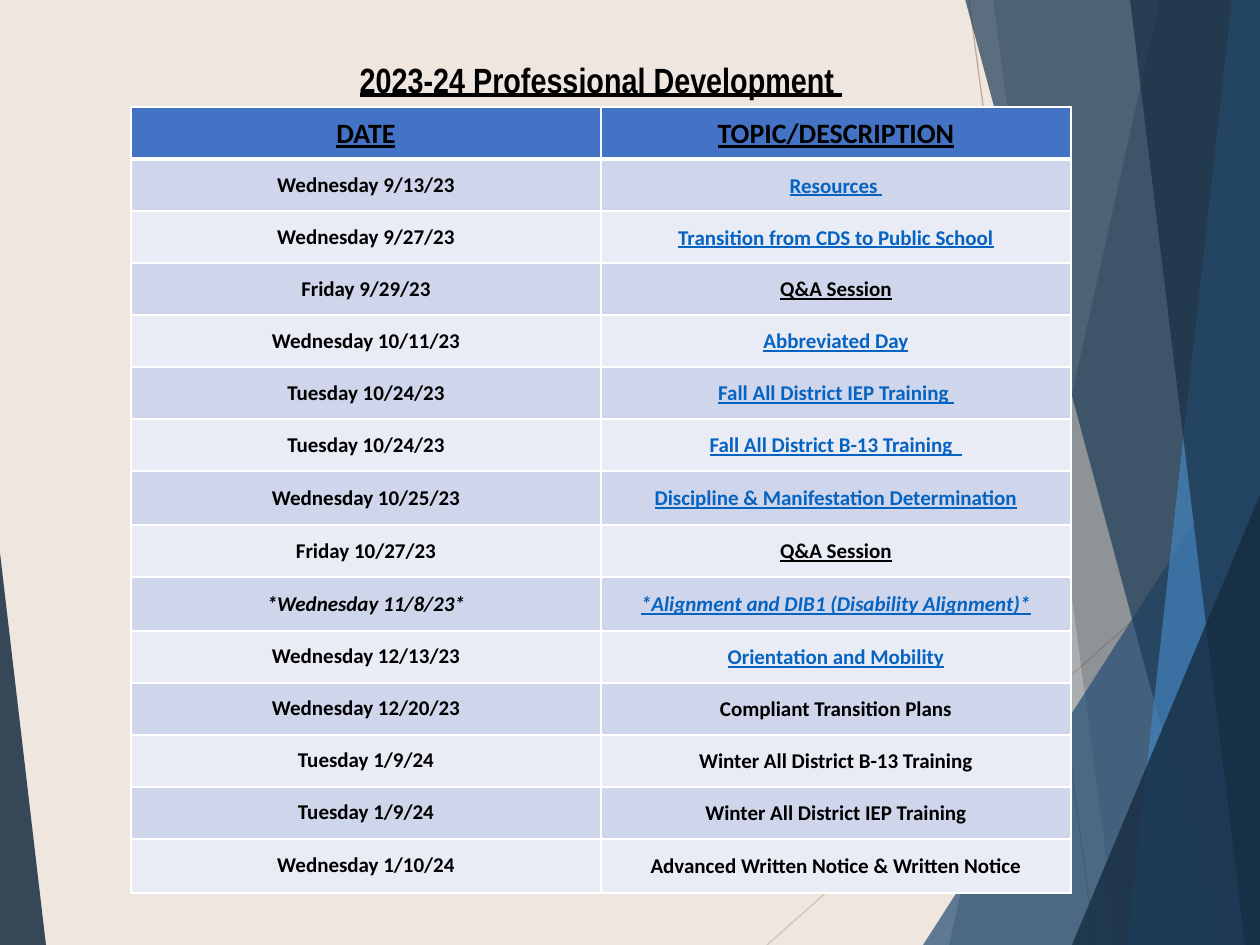
from dataclasses import dataclass

from lxml import etree
from pptx import Presentation
from pptx.dml.color import RGBColor
from pptx.enum.shapes import MSO_CONNECTOR
from pptx.enum.text import MSO_ANCHOR, MSO_AUTO_SIZE, PP_ALIGN
from pptx.oxml.ns import qn
from pptx.util import Pt

STRAIGHT = MSO_CONNECTOR.STRAIGHT
MIDDLE, TOP = MSO_ANCHOR.MIDDLE, MSO_ANCHOR.TOP
CENTER = PP_ALIGN.CENTER
NO_AUTOFIT = MSO_AUTO_SIZE.NONE

TITLE = "2023-24 Professional Development "
HEADINGS = ("DATE", "TOPIC/DESCRIPTION")
LINK, UNDERLINED, PLAIN, LINK_ITALIC = "link", "underlined", "plain", "link italic"
SESSIONS = [
    ("Wednesday 9/13/23", "Resources ", LINK),
    ("Wednesday 9/27/23", "Transition from CDS to Public School", LINK),
    ("Friday 9/29/23", "Q&A Session", UNDERLINED),
    ("Wednesday 10/11/23", "Abbreviated Day", LINK),
    ("Tuesday 10/24/23", "Fall All District IEP Training ", LINK),
    ("Tuesday 10/24/23", "Fall All District B-13 Training  ", LINK),
    ("Wednesday 10/25/23", "Discipline & Manifestation Determination", LINK),
    ("Friday 10/27/23", "Q&A Session", UNDERLINED),
    ("*Wednesday 11/8/23*", "*Alignment and DIB1 (Disability Alignment)*", LINK_ITALIC),
    ("Wednesday 12/13/23", "Orientation and Mobility", LINK),
    ("Wednesday 12/20/23", "Compliant Transition Plans", PLAIN),
    ("Tuesday 1/9/24", "Winter All District B-13 Training", PLAIN),
    ("Tuesday 1/9/24", "Winter All District IEP Training", PLAIN),
    ("Wednesday 1/10/24", "Advanced Written Notice & Written Notice", PLAIN),
]


@dataclass(frozen=True)
class Theme:
    background: str = "EEE6DF"
    ink: str = "000000"
    link: str = "0563C1"
    header: str = "4472C4"
    bands: tuple = ("CFD5EA", "E9EBF5")
    border: str = "FFFFFF"
    navy: str = "162C40"
    slate: str = "1D3B56"
    steel: str = "274F73"
    blue: str = "4283BE"
    tan: str = "C6AB94"
    pale_tan: str = "D6C3B2"
    title_font: str = "Arial Narrow"
    body_font: str = "Calibri"
    title_size: int = 20
    header_size: int = 16
    body_size: int = 12


THEME = Theme()
EMU_PER_PX = 914400 / 126
WIDTH, HEIGHT = 1260, 945
TITLE_BOX = (219, 52, 764, 55)
TABLE_LEFT, TABLE_TOP, COLUMN_WIDTH = 131, 107, 470
ROW_HEIGHT, TALL_ROW_HEIGHT, TALL_ROWS = 52, 54, (7, 9, 14)
CELL_INSET = 9

HAIRLINES = [
    ((969, 0), (1095, HEIGHT), THEME.tan),
    ((WIDTH, 508), (767, HEIGHT), THEME.pale_tan),
]
TOP_RIGHT, BOTTOM_RIGHT = (WIDTH, -1), (WIDTH, HEIGHT)
FACETS = [
    ([(1160, -1), TOP_RIGHT, BOTTOM_RIGHT, (949, HEIGHT)], THEME.navy, 30),
    ([(993, -1), TOP_RIGHT, BOTTOM_RIGHT, (1118, HEIGHT)], THEME.navy, 20),
    ([(923, HEIGHT), (WIDTH, 420), BOTTOM_RIGHT], THEME.steel, 72),
    ([(965, -1), TOP_RIGHT, BOTTOM_RIGHT, (1220, HEIGHT)], THEME.slate, 70),
    ([(1232, -1), TOP_RIGHT, BOTTOM_RIGHT, (1127, HEIGHT)], THEME.blue, 70),
    ([(1130, -1), TOP_RIGHT, BOTTOM_RIGHT, (1245, HEIGHT)], THEME.navy, 65),
    ([(1072, HEIGHT), (WIDTH, 495), BOTTOM_RIGHT], THEME.navy, 80),
    ([(0, HEIGHT), (0, 553), (46, HEIGHT)], THEME.navy, 85),
]


def px(length):
    return round(length * EMU_PER_PX)


def paint(fill, color):
    fill.solid()
    fill.fore_color.rgb = RGBColor.from_string(color)


def write(frame, text, *, font, size, color=THEME.ink, underline=False, italic=False, spacing=None):
    paragraph = frame.paragraphs[0]
    paragraph.alignment = CENTER
    if spacing:
        paragraph.line_spacing = spacing
    run = paragraph.add_run()
    run.text = text
    run.font.name = font
    run.font.size = Pt(size)
    run.font.bold = True
    run.font.italic = italic
    run.font.underline = underline
    run.font.color.rgb = RGBColor.from_string(color)


def add_hairline(slide, start, end, color):
    hairline = slide.shapes.add_connector(STRAIGHT, *map(px, start + end))
    hairline.line.color.rgb = RGBColor.from_string(color)
    hairline.line.width = Pt(0.75)
    etree.SubElement(hairline._element.spPr, qn("a:effectLst"))


def add_facet(slide, points, color, opacity):
    builder = slide.shapes.build_freeform(*points[0], scale=EMU_PER_PX)
    builder.add_line_segments(points[1:], close=True)
    facet = builder.convert_to_shape()
    facet.shadow.inherit = False
    facet.line.fill.background()
    paint(facet.fill, color)
    tint = facet._element.spPr.find(qn("a:solidFill"))[0]
    etree.SubElement(tint, qn("a:alpha"), val=str(opacity * 1000))


def add_borders(cell, top, bottom):
    properties = cell._tc.get_or_add_tcPr()
    widths = {"a:lnL": 1, "a:lnR": 1, "a:lnT": top, "a:lnB": bottom}
    for position, (side, width) in enumerate(widths.items()):
        edge = etree.Element(qn(side), w=str(Pt(width)))
        solid = etree.SubElement(edge, qn("a:solidFill"))
        etree.SubElement(solid, qn("a:srgbClr"), val=THEME.border)
        properties.insert(position, edge)


def add_schedule(slide):
    row_count = len(SESSIONS) + 1
    heights = [TALL_ROW_HEIGHT if row in TALL_ROWS else ROW_HEIGHT for row in range(row_count)]
    schedule = slide.shapes.add_table(
        row_count, 2, px(TABLE_LEFT), px(TABLE_TOP), px(2 * COLUMN_WIDTH), px(sum(heights))
    ).table
    for column in schedule.columns:
        column.width = px(COLUMN_WIDTH)
    for row, height in enumerate(heights):
        schedule.rows[row].height = px(height)
        for column in range(2):
            cell = schedule.cell(row, column)
            cell.vertical_anchor = MIDDLE
            cell.margin_left = cell.margin_right = px(CELL_INSET)
            cell.margin_top = cell.margin_bottom = 0
            paint(cell.fill, THEME.bands[(row - 1) % 2] if row else THEME.header)
            add_borders(cell, top=3 if row == 1 else 1, bottom=1 if row else 3)

    for column, heading in enumerate(HEADINGS):
        write(schedule.cell(0, column).text_frame, heading, font=THEME.body_font,
              size=THEME.header_size, underline=True, spacing=1.07)
    for row, (date, topic, style) in enumerate(SESSIONS, start=1):
        italic = style == LINK_ITALIC
        color = THEME.link if style in (LINK, LINK_ITALIC) else THEME.ink
        write(schedule.cell(row, 0).text_frame, date, font=THEME.body_font,
              size=THEME.body_size, italic=italic)
        write(schedule.cell(row, 1).text_frame, topic, font=THEME.body_font,
              size=THEME.body_size, color=color, underline=style != PLAIN,
              italic=italic, spacing=1.07)


def main():
    deck = Presentation()
    deck.slide_width, deck.slide_height = px(WIDTH), px(HEIGHT)
    slide = deck.slides.add_slide(deck.slide_layouts[5])
    paint(slide.background.fill, THEME.background)
    for hairline in HAIRLINES:
        add_hairline(slide, *hairline)
    for facet in FACETS:
        add_facet(slide, *facet)
    add_schedule(slide)

    title = slide.shapes.title
    title.left, title.top, title.width, title.height = map(px, TITLE_BOX)
    title.text_frame.auto_size = NO_AUTOFIT
    title.text_frame.vertical_anchor = TOP
    write(title.text_frame, TITLE, font=THEME.title_font, size=THEME.title_size, underline=True)
    deck.save("out.pptx")


if __name__ == "__main__":
    main()
